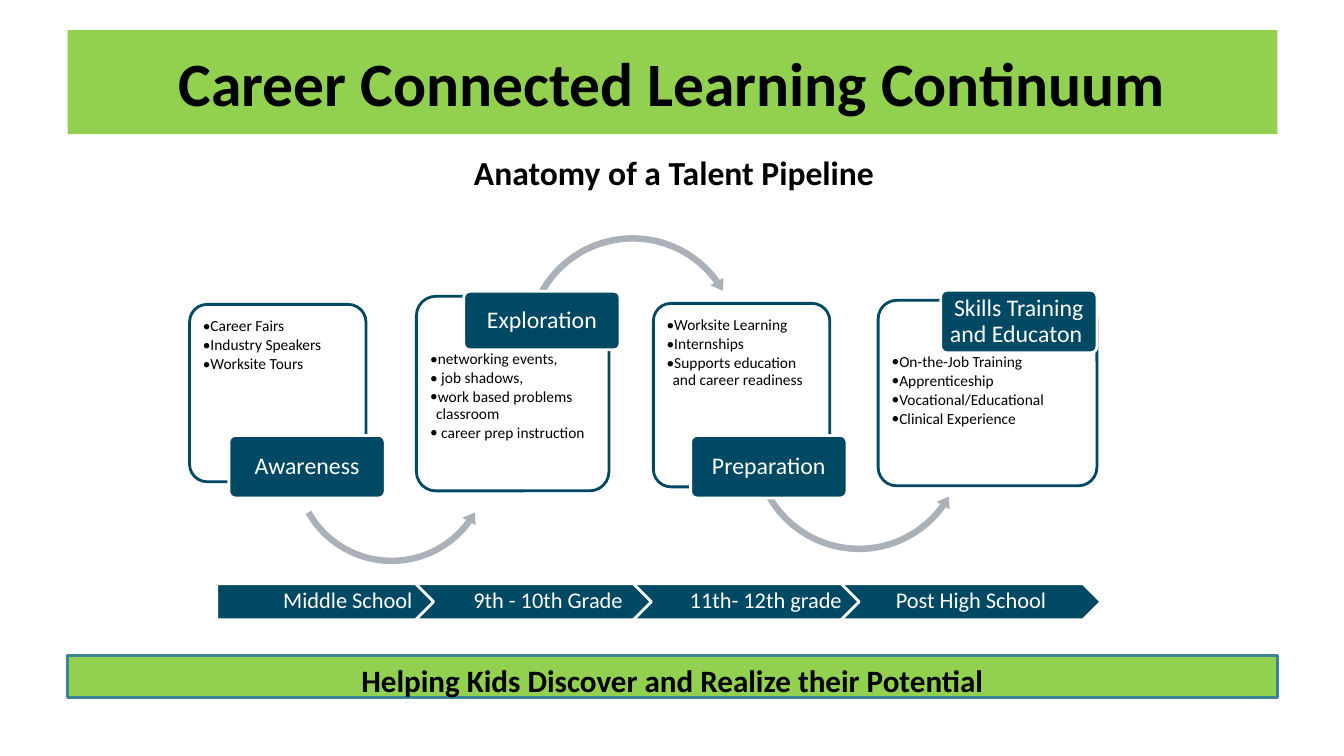
from pptx import Presentation
from pptx.dml.color import RGBColor
from pptx.enum import shapes, text
from pptx.oxml.ns import qn
from pptx.util import Inches, Pt
from lxml import etree

GREEN = RGBColor(0x92, 0xD0, 0x50)
TEAL = RGBColor(0x3B, 0x84, 0x98)
NAVY = RGBColor(0x00, 0x49, 0x64)
GREY = RGBColor(0xAB, 0xB1, 0xB8)
WHITE = RGBColor(0xFF, 0xFF, 0xFF)
BLACK = RGBColor(0x00, 0x00, 0x00)
FONT = "Calibri"
SHAPE = shapes.MSO_SHAPE
TOP, MIDDLE = text.MSO_ANCHOR.TOP, text.MSO_ANCHOR.MIDDLE
LEFT, CENTER = text.PP_ALIGN.LEFT, text.PP_ALIGN.CENTER

LABEL_WIDTH = 1.55
# card box, text drop inside the card, label box (left, top, height), label, activities
STAGES = [
    ((1.88, 3.02, 1.75, 1.76), 0, (2.27, 4.32, 0.62), "Awareness",
     ["Career Fairs", "Industry Speakers", "Worksite Tours"]),
    ((4.13, 2.94, 1.91, 1.93), 0.4, (4.6, 2.89, 0.58), "Exploration",
     ["networking events,", " job shadows,", "work based problems classroom",
      " career prep instruction"]),
    ((6.48, 3.01, 1.75, 1.82), 0, (6.85, 4.32, 0.62), "Preparation",
     ["Worksite Learning", "Internships", "Supports education and career readiness"]),
    ((8.71, 2.98, 2.17, 1.84), 0.39, (9.33, 2.88, 0.62), "Skills Training and Educaton ",
     ["On-the-Job Training", "Apprenticeship", "Vocational/Educational",
      "Clinical Experience"]),
]
# kind, left, top, size, adjustments
ARROWS = [
    (SHAPE.LEFT_CIRCULAR_ARROW, 2.86, 3.59, 2.05, (0.031, 3.871, 21.638, 90.257, 0.037)),
    (SHAPE.CIRCULAR_ARROW, 5.17, 2.29, 2.21, (0.029, 3.578, 194.547, 125.635, 0.034)),
    (SHAPE.LEFT_CIRCULAR_ARROW, 7.42, 3.32, 2.2, (0.029, 3.591, 21.347, 90.246, 0.034)),
]
GRADES = [(2.15, "Middle School "), (4.12, "9th - 10th Grade"),
          (6.28, "11th- 12th grade"), (8.34, "Post High School ")]


def place(shape, box):
    shape.left, shape.top, shape.width, shape.height = (Inches(n) for n in box)


def add_shape(page, kind, box, fill, line=None):
    shape = page.shapes.add_shape(kind, *(Inches(n) for n in box))
    shape.shadow.inherit = False
    shape.fill.solid()
    shape.fill.fore_color.rgb = fill
    if line is None:
        shape.line.fill.background()
    else:
        shape.line.color.rgb = line
        shape.line.width = Pt(2)
    return shape


def add_bullet(para):
    para.level = 1
    props = para._p.get_or_add_pPr()
    props.set("marL", str(Inches(0.06)))
    props.set("indent", str(-Inches(0.06)))
    etree.SubElement(props, qn("a:buFont")).set("typeface", FONT)
    etree.SubElement(props, qn("a:buChar")).set("char", "•")


def write(shape, lines, size, color, bold=False, anchor=MIDDLE, align=CENTER,
          insets=(0.1, 0.05, 0.1, 0.05), spacing=None, after=None, bullets=False):
    frame = shape.text_frame
    frame.word_wrap = True
    frame.auto_size = text.MSO_AUTO_SIZE.NONE
    frame.vertical_anchor = anchor
    (frame.margin_left, frame.margin_top,
     frame.margin_right, frame.margin_bottom) = (Inches(n) for n in insets)
    for index, line in enumerate(lines):
        para = frame.add_paragraph() if index else frame.paragraphs[0]
        para.text = line
        para.alignment = align
        para.line_spacing = spacing
        para.space_before = Pt(0)
        if after is not None:
            para.space_after = Pt(after)
        if bullets:
            add_bullet(para)
        for span in para.runs:
            span.font.name = FONT
            span.font.size = Pt(size)
            span.font.bold = bold
            span.font.color.rgb = color


def add_title(page, box):
    title = page.shapes.title
    place(title, box)
    title.fill.solid()
    title.fill.fore_color.rgb = GREEN
    write(title, ["Career Connected Learning Continuum"], 44, BLACK, bold=True)


def add_subtitle(page, box):
    subtitle = page.shapes.add_textbox(*(Inches(n) for n in box))
    write(subtitle, ["Anatomy of a Talent Pipeline"], 24, BLACK, bold=True, anchor=TOP)


def add_card(page, box, drop, activities):
    card = add_shape(page, SHAPE.ROUNDED_RECTANGLE, box, WHITE, NAVY)
    card.adjustments[0] = 0.1
    color = card.fill._xPr.find(qn("a:solidFill"))[0]
    etree.SubElement(color, qn("a:alpha")).set("val", "90000")
    write(card, activities, 11, BLACK, anchor=TOP, align=LEFT,
          insets=(0.08, 0.09 + drop, 0.09, 0.09), spacing=0.9, after=1.65, bullets=True)


def add_arrow(page, kind, left, top, size, adjustments):
    arrow = add_shape(page, kind, (left, top, size, size), GREY)
    for index, value in enumerate(adjustments):
        arrow.adjustments[index] = value


def add_label(page, left, top, height, name):
    label = add_shape(page, SHAPE.ROUNDED_RECTANGLE,
                      (left, top, LABEL_WIDTH, height), NAVY, WHITE)
    label.adjustments[0] = 0.1
    write(label, [name], 17, WHITE, insets=(0.02, 0, 0.02, 0), spacing=0.9)


def add_pipeline(page):
    # Each stage: card, arrow to the next stage, label on top
    for index, (box, drop, label_box, name, activities) in enumerate(STAGES):
        add_card(page, box, drop, activities)
        if index < len(ARROWS):
            add_arrow(page, *ARROWS[index])
        add_label(page, *label_box, name)


def add_timeline(page, top, width, height):
    for index, (left, grade) in enumerate(GRADES):
        kind = SHAPE.CHEVRON if index else SHAPE.PENTAGON
        step = add_shape(page, kind, (left, top, width, height), NAVY, WHITE)
        inset = 0.07 if index else 0.18
        write(step, [grade], 16, WHITE, insets=(inset, 0.02, 0.02, 0.03), spacing=0.9)


def add_footer(page, box):
    bar = add_shape(page, SHAPE.RECTANGLE, box, GREEN, TEAL)
    write(bar, ["Helping Kids Discover and Realize their Potential"], 22.2, BLACK,
          bold=True, anchor=TOP, insets=(0.1, 0.06, 0.1, 0))


def main():
    deck = Presentation()
    deck.slide_width, deck.slide_height = Inches(13.33), Inches(7.5)
    page = deck.slides.add_slide(deck.slide_layouts[5])
    add_footer(page, (0.67, 6.5, 12, 0.42))
    add_title(page, (0.67, 0.3, 12, 1.03))
    add_pipeline(page)
    add_timeline(page, 5.79, 2.58, 0.36)
    add_subtitle(page, (0.68, 1.46, 12.01, 0.5))
    deck.save("out.pptx")


if __name__ == "__main__":
    main()
